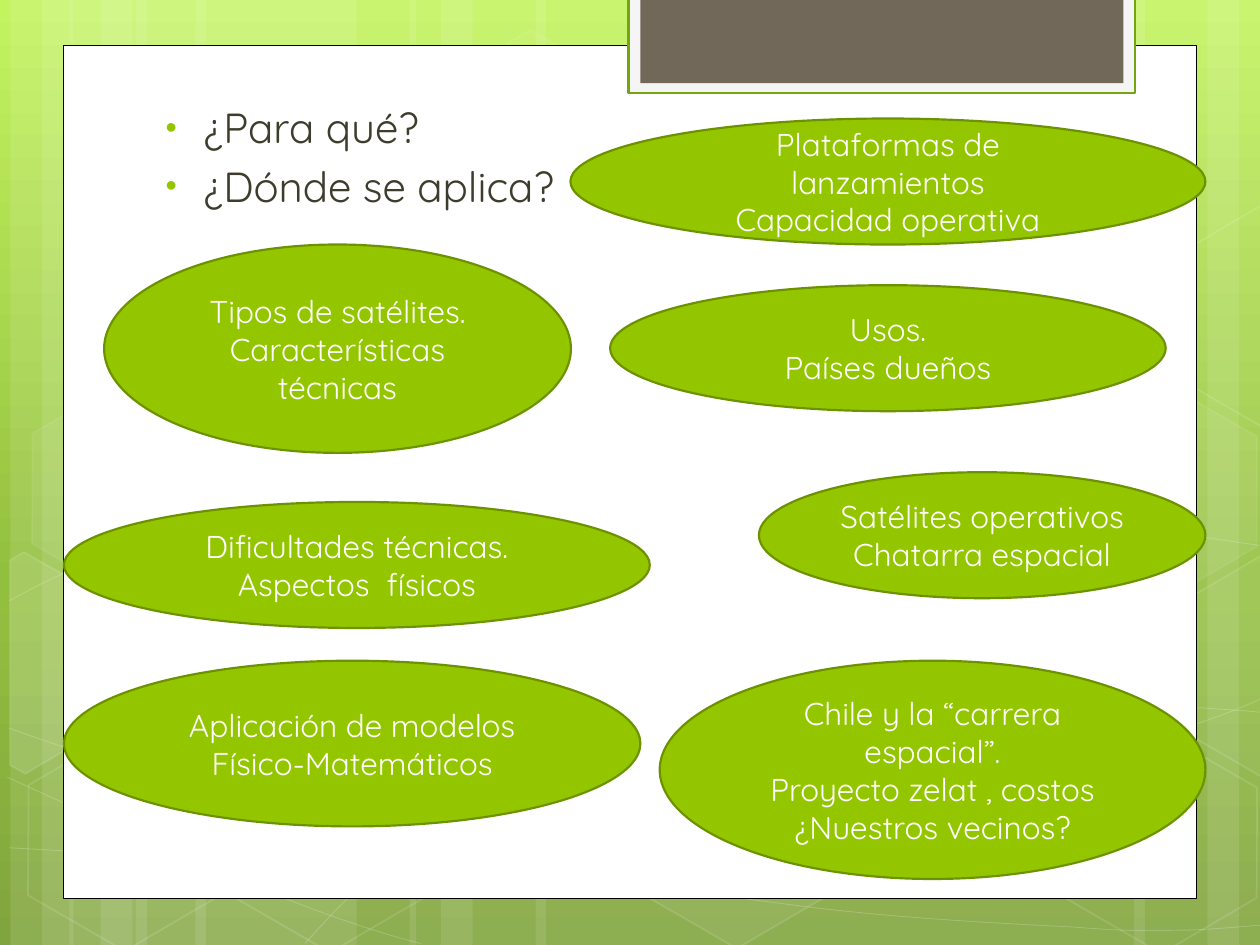
from copy import deepcopy
from dataclasses import dataclass

from lxml import etree
from pptx import Presentation
from pptx.dml.color import RGBColor
from pptx.enum.shapes import MSO_SHAPE
from pptx.enum.text import MSO_ANCHOR, PP_ALIGN
from pptx.oxml.ns import qn
from pptx.util import Cm, Pt

RECTANGLE, ELLIPSE, HEXAGON = MSO_SHAPE.RECTANGLE, MSO_SHAPE.OVAL, MSO_SHAPE.HEXAGON
MIDDLE, TOP = MSO_ANCHOR.MIDDLE, MSO_ANCHOR.TOP
CENTER, LEFT = PP_ALIGN.CENTER, PP_ALIGN.LEFT


@dataclass(frozen=True)
class Theme:
    font: str = "Quicksand"
    question_size: float = 24
    topic_size: float = 18
    green: str = "94C600"
    dark_green: str = "6D9200"
    tab_edge: str = "74A510"
    tab_paper: str = "F5F5F5"
    tab_core: str = "71685A"
    ink: str = "3E3D2D"
    white: str = "FFFFFF"
    black: str = "000000"
    backdrop: tuple = ((0, "C3F35F"), (0.62, "93BF3F"), (1, "81A53E"))


THEME = Theme()
SLIDE_WIDTH, SLIDE_HEIGHT = 25.4, 19.05
BULLET_INDENT, BULLET_HANG = 0.97, 0.76

# All positions are in centimetres
STRIPES = [  # left, width
    (2.74, 4.45), (0.21, 1.27), (0.85, 2.12), (3.94, 4.45), (1.4, 1.27), (2.03, 2.12),
    (18.63, 4.45), (24.34, 1.27), (22.86, 2.12), (10.8, 7.83), (8.26, 1.27), (8.89, 2.12),
]
CURVES = [  # start, then segments: two controls and an end, or an end alone if straight
    ((0.18, 17.09), [(1.55, 17.17, 2.92, 17.25, 4.83, 17.22),
                     (6.73, 17.2, 9.09, 17.15, 11.63, 16.89),
                     (14.17, 16.64, 17.78, 16.15, 20.12, 15.67),
                     (22.43, 15.19, 24.82, 14.43, 25.58, 14)]),
    ((0.18, 12.12), [(0.91, 11.71, 1.65, 11.33, 3.07, 10.95),
                     (4.52, 10.57, 6.58, 10.01, 8.81, 9.83),
                     (11.07, 9.65, 13.82, 9.63, 16.61, 9.83),
                     (19.41, 10.03, 24.05, 10.82, 25.58, 11.02)]),
    ((0.15, 15.67), [(3.23, 17.07, 6.27, 18.47, 8.48, 19.02)]),
    ((0.18, 14.68), [(0.97, 14.96, 1.78, 15.24, 3.25, 15.65),
                     (4.72, 16.03, 6.93, 16.66, 9.07, 17.09),
                     (11.18, 17.53, 13.84, 17.98, 15.95, 18.24),
                     (18.06, 18.52, 20.32, 18.62, 21.67, 18.69),
                     (22.99, 18.8, 23.34, 18.75, 24, 18.75),
                     (24.66, 18.72, 25.12, 18.67, 25.58, 18.64)]),
    ((6.15, 19.02), [(6.6, 18.52, 7.06, 18.01, 7.67, 17.55),
                     (8.28, 17.09, 9.14, 16.59, 9.86, 16.23),
                     (10.57, 15.88, 11, 15.72, 11.94, 15.47),
                     (12.85, 15.21, 14.55, 14.86, 15.44, 14.68),
                     (16.36, 14.5, 16.48, 14.5, 17.27, 14.45),
                     (18.08, 14.38, 19.3, 14.3, 20.17, 14.27),
                     (21.06, 14.25, 22.5, 14.27, 22.5, 14.27),
                     (24.21, 14.27),
                     (24.66, 14.3, 25.1, 14.33, 25.32, 14.35),
                     (25.55, 14.38, 25.48, 14.35, 25.55, 14.38)]),
]
HEXAGONS = [  # left, top, fill opacity, line opacity
    (8.48, 0.91, 4, 8), (12.62, 14.96, 6, 12), (0.28, 15.01, None, 12), (0.36, 7.92, 7, 8),
    (4.42, 15.04, None, 12), (19.13, 11.51, 10, 12), (21.18, 15.06, None, 12),
    (21.18, 7.98, 7, 8),
]
CUT_HEXAGONS = [  # corners, fill opacity
    ([(0.2, 11.3), (0.48, 11.13), (2.44, 12.24), (2.41, 14.48), (0.51, 15.6),
      (0.2, 15.42)], 10),
    ([(23.52, 12.32), (25.43, 11.2), (25.63, 11.33), (25.63, 15.57), (25.45, 15.67),
      (23.52, 14.55)], 4),
    ([(23.52, 5.26), (25.43, 4.14), (25.65, 4.27), (25.63, 8.51), (25.45, 8.61),
      (23.52, 7.49)], None),
]
QUESTIONS = ["¿Para qué?", "¿Dónde se aplica?"]
TOPICS = [  # left, top, width, height, paragraphs
    (2.1, 4.93, 9.41, 4.2, ["Tipos de satélites.", "Características técnicas"]),
    (11.5, 2.39, 12.8, 2.54, ["Plataformas de lanzamientos", "Capacidad operativa"]),
    (12.3, 5.75, 11.2, 2.54, ["Usos.", "Países dueños"]),
    (1.29, 10.12, 11.81, 2.54, ["Dificultades técnicas.", "Aspectos  físicos"]),
    (15.3, 9.52, 9, 2.54, ["Satélites operativos", "Chatarra espacial"]),
    (1.29, 13.32, 11.62, 3.34, ["Aplicación de modelos Físico-Matemáticos"]),
    (13.3, 13.32, 11, 4.4, ["Chile y la “carrera espacial”.", "Proyecto zelat , costos",
                            "¿Nuestros vecinos?"]),
]


def apply(target, values):
    for name, value in values.items():
        setattr(target, name, value)


def paint(fill, color, opacity=100):
    """Solid fill, with an alpha element when it is see-through."""
    fill.solid()
    fill.fore_color.rgb = RGBColor.from_string(color)
    if opacity < 100:
        tint = fill._xPr.find(qn("a:solidFill"))[0]
        etree.SubElement(tint, qn("a:alpha"), val=str(opacity * 1000))


def style(shape, fill=None, fill_opacity=100, line=None, line_width=1, line_opacity=100):
    shape.shadow.inherit = False
    if fill and fill_opacity:
        paint(shape.fill, fill, fill_opacity)
    else:
        shape.fill.background()
    if line:
        shape.line.width = Pt(line_width)
        paint(shape.line.fill, line, line_opacity)
    else:
        shape.line.fill.background()


def add_preset(slide, kind, box, **look):
    shape = slide.shapes.add_shape(kind, *(Cm(length) for length in box))
    style(shape, **look)
    return shape


def add_outline(slide, points, close, **look):
    start, *others = [(Cm(x), Cm(y)) for x, y in points]
    builder = slide.shapes.build_freeform(*start)
    builder.add_line_segments(others, close=close)
    outline = builder.convert_to_shape()
    style(outline, **look)
    return outline


def add_curve(slide, start, segments, **look):
    """Outline through all controls, whose triples then become cubic segments."""
    points = [start] + [pair for s in segments for pair in zip(s[::2], s[1::2])]
    curve = add_outline(slide, points, False, **look)
    steps = iter(list(curve._element.iter(qn("a:lnTo"))))
    for segment in segments:
        group = [next(steps) for _ in segment[::2]]
        if len(group) == 3:
            bend = etree.Element(qn("a:cubicBezTo"))
            group[0].addprevious(bend)
            for step in group:
                bend.append(step[0])
                step.getparent().remove(step)


def write(frame, lines, size, color, anchor, align, space_before=0):
    apply(frame, {"word_wrap": True, "vertical_anchor": anchor})
    for index, line in enumerate(lines):
        paragraph = frame.add_paragraph() if index else frame.paragraphs[0]
        apply(paragraph, {"text": line, "alignment": align, "space_before": Pt(space_before)})
        apply(paragraph.font, {"size": Pt(size), "name": THEME.font})
        paragraph.font.color.rgb = RGBColor.from_string(color)


def add_bullet(paragraph):
    props = paragraph._p.get_or_add_pPr()
    props.set("marL", str(Cm(BULLET_INDENT)))
    props.set("indent", str(-Cm(BULLET_HANG)))
    color = etree.Element(qn("a:buClr"))
    etree.SubElement(color, qn("a:srgbClr"), val=THEME.green)
    size = etree.Element(qn("a:buSzPct"), val="76000")
    font = etree.Element(qn("a:buFont"), typeface="Arial")
    mark = etree.Element(qn("a:buChar"), char="•")
    at = props.index(props.find(qn("a:spcBef"))) + 1
    props[at:at] = [color, size, font, mark]


def fill_backdrop(slide):
    fill = slide.background.fill
    fill.gradient()
    fill.gradient_angle = 270
    stop_list = slide._element.find(".//" + qn("a:gsLst"))
    stop_list.append(deepcopy(stop_list[-1]))
    for stop, (position, color) in zip(fill.gradient_stops, THEME.backdrop):
        stop.position = position
        stop.color.rgb = RGBColor.from_string(color)


def draw_decoration(slide):
    white = THEME.white
    for left, width in STRIPES:
        add_preset(slide, RECTANGLE, (left, 0, width, SLIDE_HEIGHT), fill=white, fill_opacity=10)
    for start, segments in CURVES:
        add_curve(slide, start, segments, line=white, line_width=0.5, line_opacity=20)
    for left, top, inside, edge in HEXAGONS:
        hexagon = add_preset(slide, HEXAGON, (left, top, 4.45, 3.86), fill=white,
                             fill_opacity=inside, line=white, line_opacity=edge)
        hexagon.rotation = 30
        hexagon.adjustments[0] = 0.285
    for corners, inside in CUT_HEXAGONS:
        add_outline(slide, corners, True, fill=white, fill_opacity=inside,
                    line=white, line_opacity=12)


def main():
    deck = Presentation()
    apply(deck, {"slide_width": Cm(SLIDE_WIDTH), "slide_height": Cm(SLIDE_HEIGHT)})
    slide = deck.slides.add_slide(deck.slide_layouts[6])

    # Green backdrop, white page and the tab at its top
    fill_backdrop(slide)
    draw_decoration(slide)
    add_preset(slide, RECTANGLE, (1.28, 0.91, 22.85, 17.2),
               fill=THEME.white, line=THEME.black, line_width=0.5)
    add_preset(slide, RECTANGLE, (12.67, -0.05, 10.21, 1.93),
               fill=THEME.tab_paper, line=THEME.tab_edge, line_width=1.25)
    add_preset(slide, RECTANGLE, (12.91, -0.05, 9.74, 1.73), fill=THEME.tab_core)

    # Opening questions
    questions = slide.shapes.add_textbox(Cm(2.88), Cm(1.93), Cm(18.82), Cm(14.27)).text_frame
    write(questions, QUESTIONS, THEME.question_size, THEME.ink, TOP, LEFT, space_before=4.8)
    for paragraph in questions.paragraphs:
        add_bullet(paragraph)

    # Topic bubbles
    for *box, lines in TOPICS:
        bubble = add_preset(slide, ELLIPSE, box, fill=THEME.green,
                            line=THEME.dark_green, line_width=1.25)
        write(bubble.text_frame, lines, THEME.topic_size, THEME.white, MIDDLE, CENTER)

    deck.save("out.pptx")


if __name__ == "__main__":
    main()
